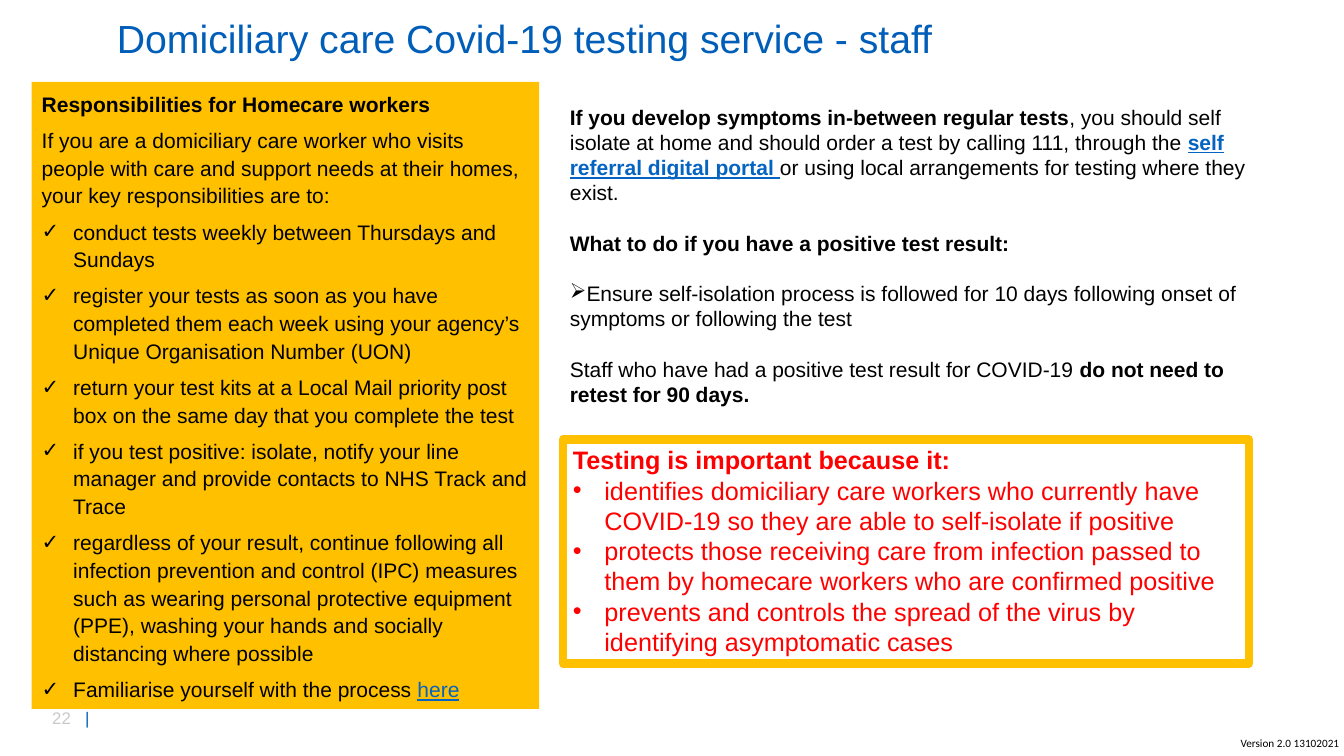
from lxml import etree
from pptx import Presentation
from pptx.dml.color import RGBColor
from pptx.enum.shapes import MSO_SHAPE
from pptx.enum.text import MSO_ANCHOR as ANCHOR, MSO_AUTO_SIZE as AUTO, PP_ALIGN as ALIGN
from pptx.oxml.ns import qn
from pptx.util import Pt

BLUE = RGBColor(0x00, 0x5E, 0xB8)
LINK = RGBColor(0x05, 0x63, 0xC1)
AMBER = RGBColor(0xFF, 0xC0, 0x00)
RED = RGBColor(0xFF, 0x00, 0x00)
BLACK = RGBColor(0x00, 0x00, 0x00)
GREY = RGBColor(0xC9, 0xC9, 0xC9)


def place(s, left, top, width, height, anchor=ANCHOR.TOP, wrap=True):
    s.left, s.top, s.width, s.height = Pt(left), Pt(top), Pt(width), Pt(height)
    tf = s.text_frame
    tf.auto_size = AUTO.NONE
    tf.word_wrap = wrap
    tf.vertical_anchor = anchor
    return tf


def write(tf, paragraphs, size, color, indent=0, before=0, after=0, spacing=1.0):
    for i, (bullet, runs) in enumerate(paragraphs):
        p = tf.paragraphs[0] if i == 0 else tf.add_paragraph()
        pPr = p._p.get_or_add_pPr()
        hang = Pt(indent) if bullet else 0
        pPr.set("marL", str(hang))
        pPr.set("indent", str(-hang))
        if bullet:
            etree.SubElement(pPr, qn("a:buChar")).set("char", bullet)
        else:
            etree.SubElement(pPr, qn("a:buNone"))
        p.alignment = ALIGN.LEFT
        p.line_spacing = spacing
        p.space_before = Pt(before if i else 0)
        p.space_after = Pt(after)
        for text, style in runs:
            r = p.add_run()
            r.text = text
            r.font.name = "Arial"
            r.font.size = Pt(size)
            r.font.bold = "bold" in style
            r.font.underline = "link" in style
            r.font.color.rgb = LINK if "link" in style else color


prs = Presentation()
prs.slide_width, prs.slide_height = Pt(960), Pt(540)
slide = prs.slides.add_slide(prs.slide_layouts[3])
title, duties, reasons = slide.placeholders

tf = place(title, 76.3, 5, 690, 48.2, ANCHOR.MIDDLE)
write(tf, [(None, [("Domiciliary care Covid-19 testing service - staff", "")])], 28, BLUE, spacing=0.9)

tf = place(duties, 22.6, 58.4, 362.6, 448, ANCHOR.MIDDLE)
duties.fill.solid()
duties.fill.fore_color.rgb = AMBER
write(tf, [
    (None, [("Responsibilities for Homecare workers", "bold")]),
    (None, [("If you are a domiciliary care worker who visits people with care and support needs at their homes, your key responsibilities are to:", "")]),
    ("✓", [("conduct tests weekly between Thursdays and Sundays", "")]),
    ("✓", [("register your tests as soon as you have completed them each week using your agency’s Unique Organisation Number (UON)", "")]),
    ("✓", [("return your test kits at a Local Mail priority post box on the same day that you complete the test", "")]),
    ("✓", [("if you test positive: isolate, notify your line manager and provide contacts to NHS Track and Trace", "")]),
    ("✓", [("regardless of your result, continue following all infection prevention and control (IPC) measures such as wearing personal protective equipment (PPE), washing your hands and socially distancing where possible", "")]),
    ("✓", [("Familiarise yourself with the process ", ""), ("here", "link")]),
], 15, BLACK, indent=22.5, after=6, spacing=1.1)

s = slide.shapes.add_textbox(0, 0, 0, 0)
tf = place(s, 400, 70, 524, 225, ANCHOR.MIDDLE)
write(tf, [
    (None, [("If you develop symptoms in-between regular tests", "bold"),
            (", you should self isolate at home and should order a test by calling 111, through the ", ""),
            ("self referral digital portal ", "bold link"),
            ("or using local arrangements for testing where they exist.", "")]),
    (None, [("What to do if you have a positive test result:", "bold")]),
    ("➢", [("Ensure self-isolation process is followed for 10 days following onset of symptoms or following the test", "")]),
    (None, [("Staff who have had a positive test result for COVID-19 ", ""),
            ("do not need to retest for 90 days.", "bold")]),
], 15, BLACK, before=18)

tf = place(reasons, 402, 314, 490, 160)
reasons.line.color.rgb = AMBER
reasons.line.width = Pt(6)
etree.SubElement(reasons.line._get_or_add_ln(), qn("a:round"))
write(tf, [
    (None, [("Testing is important because it:", "bold")]),
    ("•", [("identifies domiciliary care workers who currently have COVID-19 so they are able to self-isolate if positive", "")]),
    ("•", [("protects those receiving care from infection passed to them by homecare workers who are confirmed positive", "")]),
    ("•", [("prevents and controls the spread of the virus by identifying asymptomatic cases", "")]),
], 18, RED, indent=22.5)

s = slide.shapes.add_textbox(0, 0, 0, 0)
tf = place(s, 30.2, 502, 68, 21.6)
p = tf.paragraphs[0]
tabs = etree.SubElement(p._p.get_or_add_pPr(), qn("a:tabLst"))
etree.SubElement(tabs, qn("a:tab"), pos=str(Pt(23.5)), algn="l")
for text, color in (("22\t", GREY), ("|", BLUE)):
    r = p.add_run()
    r.text = text
    r.font.name = "Arial"
    r.font.size = Pt(12)
    r.font.color.rgb = color

s = slide.shapes.add_textbox(0, 0, 0, 0)
tf = place(s, 879, 522.7, 87, 17.3, wrap=False)
tf.text = "Version 2.0 13102021"
p = tf.paragraphs[0]
p.alignment = ALIGN.LEFT
r = p.runs[0]
r.font.name = "Calibri"
r.font.size = Pt(8)
r.font.color.rgb = BLACK

prs.save("out.pptx")
